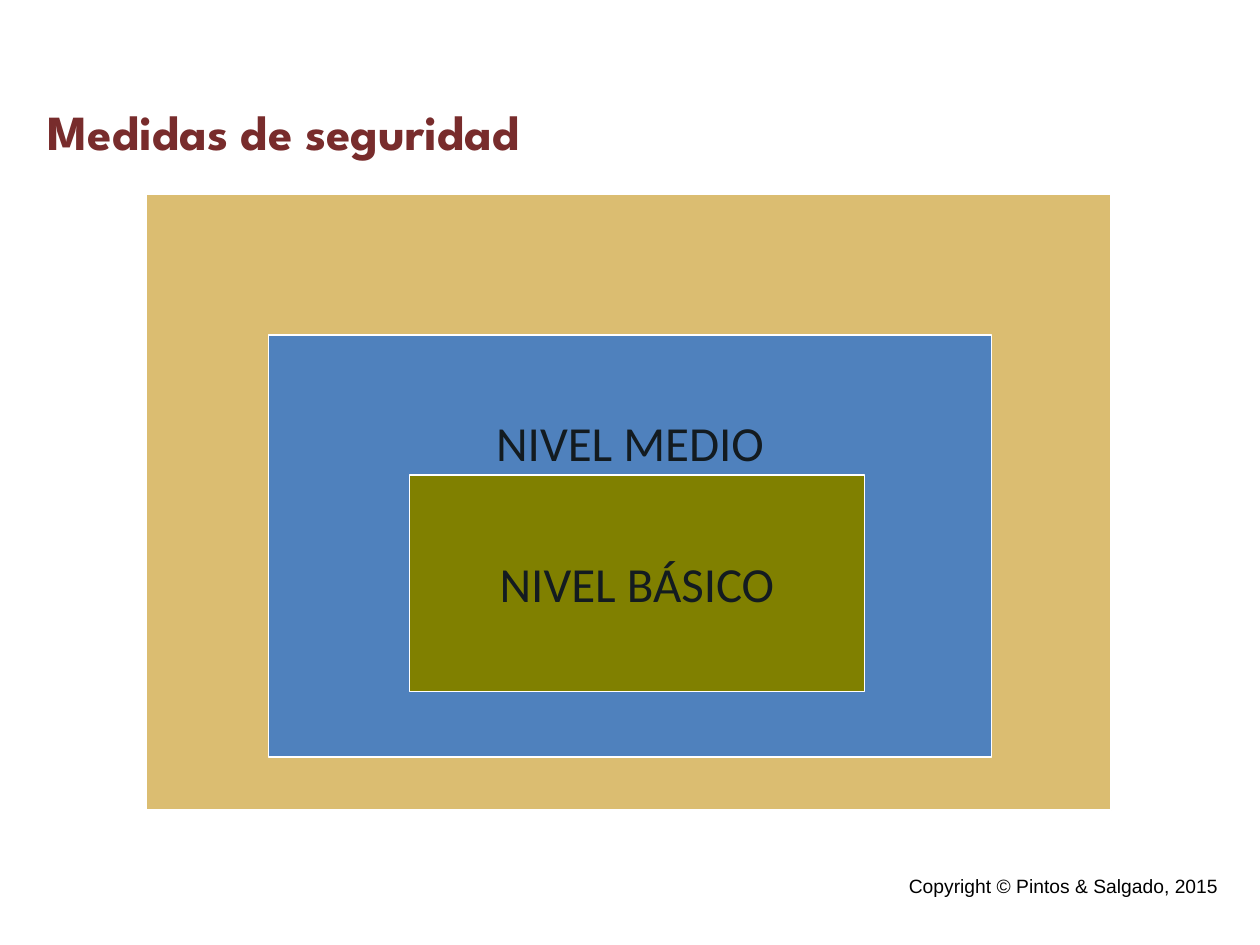
from pptx import Presentation
from pptx.dml.color import RGBColor
from pptx.enum.shapes import MSO_SHAPE
from pptx.enum.text import MSO_ANCHOR, PP_ALIGN
from pptx.util import Pt

RECTANGLE = MSO_SHAPE.RECTANGLE
TOP, MIDDLE, BOTTOM = MSO_ANCHOR.TOP, MSO_ANCHOR.MIDDLE, MSO_ANCHOR.BOTTOM
LEFT, CENTER, RIGHT = PP_ALIGN.LEFT, PP_ALIGN.CENTER, PP_ALIGN.RIGHT

THEME = {
    "title": {"font": "League Spartan", "size": 28, "color": "782C2C", "bold": True},
    "level": {"font": "Calibri", "size": 28, "color": "131B20", "bold": False},
    "copyright": {"font": "Arial", "size": 11, "color": "000000", "bold": False},
    "high": "DBBD71",
    "medium": "4F81BD",
    "basic": "808000",
    "border": "FFFFFF",
}

LEVELS = [
    {"fill": "high", "label": "", "box": (83.5, 111, 551.5, 352), "anchor": MIDDLE, "inset": 0},
    {"fill": "medium", "label": "NIVEL MEDIO", "box": (153.4, 191.5, 413.3, 241.2), "anchor": TOP, "inset": 44},
    {"fill": "basic", "label": "NIVEL BÁSICO", "box": (234, 271.4, 260, 123.8), "anchor": MIDDLE, "inset": 0},
]
TITLE = ("Medidas de seguridad", (20.2, 54.7, 674.6, 73.4))
COPYRIGHT = ("Copyright © Pintos & Salgado, 2015", (468.7, 495.4, 227.5, 17.3))


def write(shape, text, style, align, anchor, insets):
    """Put one styled line of text into a shape."""
    look = THEME[style]
    frame = shape.text_frame
    frame.word_wrap = True
    frame.vertical_anchor = anchor
    frame.margin_left, frame.margin_top, frame.margin_right, frame.margin_bottom = map(Pt, insets)
    frame.text = text
    paragraph = frame.paragraphs[0]
    paragraph.alignment = align
    for run in paragraph.runs:
        run.font.name = look["font"]
        run.font.size = Pt(look["size"])
        run.font.bold = look["bold"]
        run.font.color.rgb = RGBColor.from_string(look["color"])


def add_level(slide, level):
    """Draw one of the nested security levels."""
    block = slide.shapes.add_shape(RECTANGLE, *map(Pt, level["box"]))
    block.shadow.inherit = False
    block.fill.solid()
    block.fill.fore_color.rgb = RGBColor.from_string(THEME[level["fill"]])
    block.line.color.rgb = RGBColor.from_string(THEME["border"])
    block.line.width = Pt(1)
    if level["label"]:
        write(block, level["label"], "level", CENTER, level["anchor"], (0, level["inset"], 0, 0))


def add_caption(slide, caption, style, align, anchor, insets):
    """Add a text box for the title or the copyright line."""
    text, box = caption
    write(slide.shapes.add_textbox(*map(Pt, box)), text, style, align, anchor, insets)


def main():
    """Build and save the slide."""
    deck = Presentation()
    deck.slide_width, deck.slide_height = Pt(720), Pt(540)
    slide = deck.slides.add_slide(deck.slide_layouts[6])
    add_caption(slide, TITLE, "title", LEFT, TOP, (7.2, 3.6, 7.2, 3.6))
    for level in LEVELS:
        add_level(slide, level)
    add_caption(slide, COPYRIGHT, "copyright", RIGHT, BOTTOM, (0, 0, 0, 0))
    deck.save("out.pptx")


if __name__ == "__main__":
    main()
